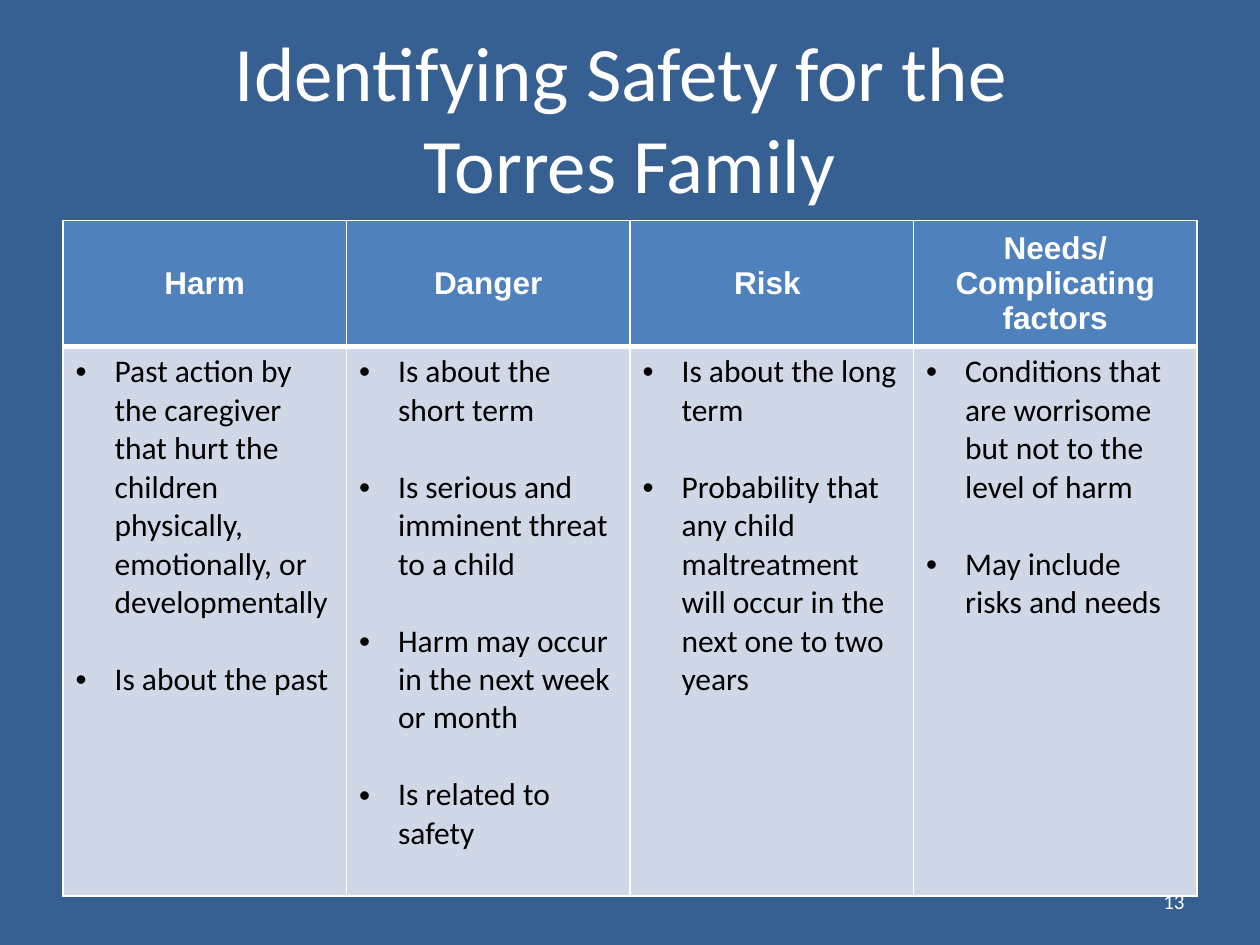
from pptx import Presentation
from pptx.dml.color import RGBColor as RGB
from pptx.enum.text import MSO_ANCHOR as Anchor, PP_ALIGN as Align
from pptx.oxml.ns import qn
from pptx.util import Inches as In, Pt
from lxml.etree import SubElement as Sub

TITLE = ["Identifying Safety for the ", "Torres Family"]
COLS = [
    (["Harm"], [
        "Past action by the caregiver that hurt the children physically, "
        "emotionally, or developmentally",
        "Is about the past"]),
    (["Danger"], [
        "Is about the short term",
        "Is serious and imminent threat to a child",
        "Harm may occur in the next week or month",
        "Is related to safety"]),
    (["Risk "], [
        "Is about the long term",
        "Probability that any child maltreatment will occur in the next "
        "one to two years"]),
    (["Needs/", "Complicating factors"], [
        "Conditions that are worrisome but not to the level of harm",
        "May include risks and needs"]),
]
PAGE = "13"
WIDE, HIGH = 10, 7.5
EDGE = WIDE / 20
SPAN = WIDE - 2 * EDGE
ROWS = [0.94, 4.36]
WHITE, BLACK, BACK, HEAD, BODY = "FFFFFF", "000000", "376092", "4F81BD", "D0D8E8"


def color(code):
    return RGB.from_string(code)


def add_run(para, text, size, font, code, bold=False):
    run = para.add_run()
    run.text = text
    run.font.size = Pt(size)
    run.font.name = font
    run.font.bold = bold
    run.font.color.rgb = color(code)


def add_box(slide, x, y, w, h, align):
    frame = slide.shapes.add_textbox(In(x), In(y), In(w), In(h)).text_frame
    frame.word_wrap = True
    frame.vertical_anchor = Anchor.MIDDLE
    para = frame.paragraphs[0]
    para.alignment = align
    return para


def add_lines(cell, base):
    props = cell._tc.get_or_add_tcPr()
    for side, wide in zip("LRTB", (1, 1, 1, base)):
        line = Sub(props, qn("a:ln" + side), w=str(Pt(wide)))
        fill = Sub(line, qn("a:solidFill"))
        Sub(fill, qn("a:srgbClr"), val=WHITE)


def add_bullet(para):
    props = para._p.get_or_add_pPr()
    props.set("marL", str(In(0.31)))
    props.set("indent", str(In(-0.31)))
    Sub(props, qn("a:buFont"), typeface="Arial")
    Sub(props, qn("a:buChar"), char="•")


def fill_cell(cell, texts, head):
    add_lines(cell, 3 if head else 1)
    cell.fill.solid()
    cell.fill.fore_color.rgb = color(HEAD if head else BODY)
    cell.vertical_anchor = Anchor.MIDDLE if head else Anchor.TOP
    frame = cell.text_frame
    for i, text in enumerate(texts):
        para = frame.add_paragraph() if i else frame.paragraphs[0]
        if head:
            para.alignment = Align.CENTER
            add_run(para, text, 18, "Arial", WHITE, True)
        else:
            para.space_before = Pt(22 if i else 0)
            add_bullet(para)
            add_run(para, text, 18, "Calibri", BLACK)


def main():
    deck = Presentation()
    deck.slide_width, deck.slide_height = In(WIDE), In(HIGH)
    slide = deck.slides.add_slide(deck.slide_layouts[6])
    slide.background.fill.solid()
    slide.background.fill.fore_color.rgb = color(BACK)

    title = add_box(slide, EDGE, 0.3, SPAN, 1.25, Align.CENTER)
    for i, text in enumerate(TITLE):
        if i:
            title.add_line_break()
        add_run(title, text, 44, "Calibri", WHITE)

    table = slide.shapes.add_table(
        len(ROWS), len(COLS), In(EDGE), In(1.75), In(SPAN), In(sum(ROWS))).table
    for row, high in zip(table.rows, ROWS):
        row.height = In(high)
    for c, col in enumerate(COLS):
        table.columns[c].width = In(SPAN / len(COLS))
        for r, texts in enumerate(col):
            fill_cell(table.cell(r, c), texts, r == 0)

    page = add_box(slide, 7.17, 6.95, 2.33, 0.4, Align.RIGHT)
    add_run(page, PAGE, 12, "Calibri", WHITE)
    deck.save("out.pptx")


if __name__ == "__main__":
    main()
